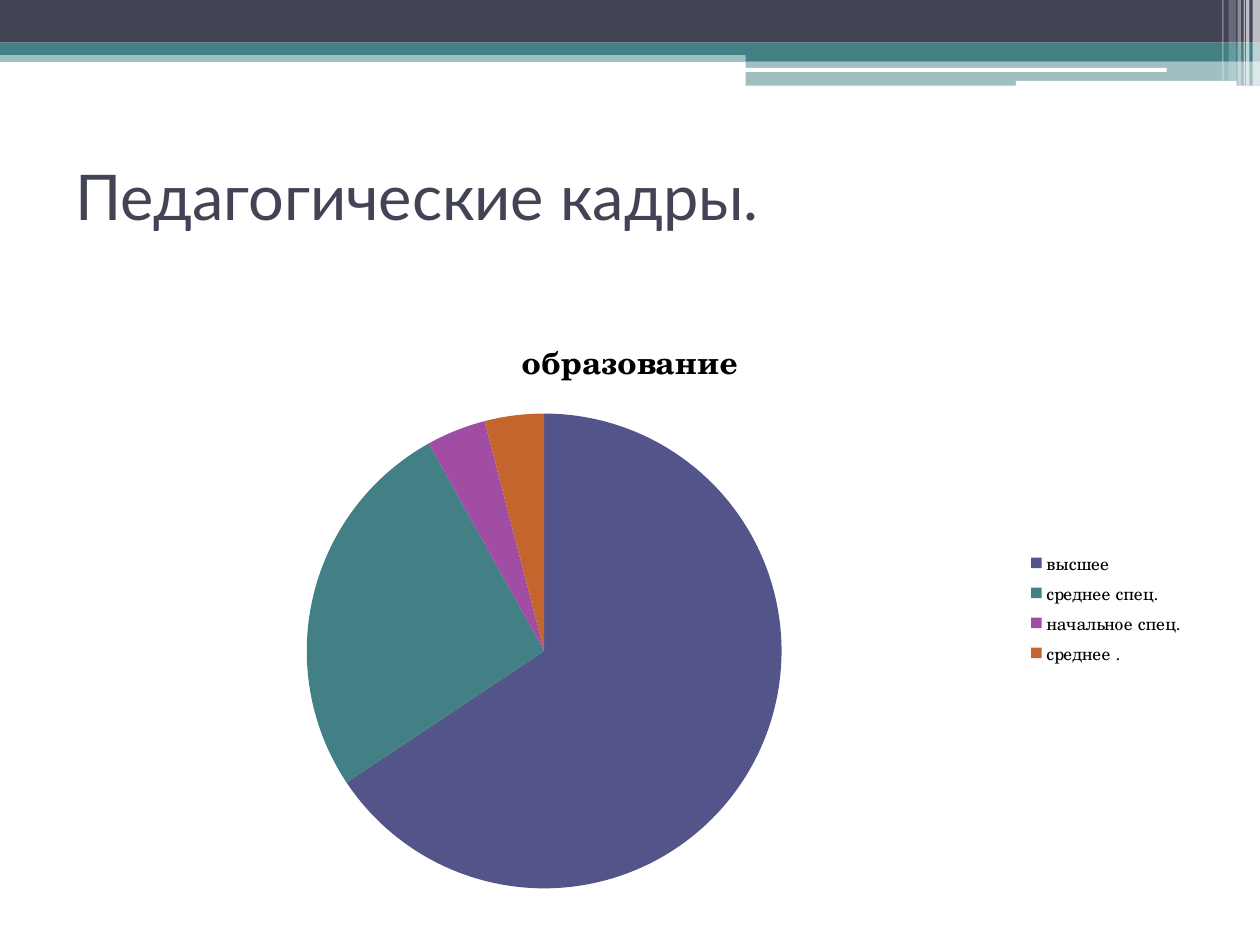
import pptx
import pptx.chart.data
import pptx.dml.color
import pptx.enum.chart
import pptx.enum.shapes
import pptx.enum.text
import pptx.oxml
import pptx.oxml.ns
import pptx.util
from pptx.util import Cm

COLOURS = {
    "slate": "424456",
    "teal": "438086",
    "white": "FFFFFF",
    "black": "000000",
    "indigo": "53548A",
    "purple": "A04DA3",
    "orange": "C4652D",
}


class SlideBuilder:
    """Holds the style and the current slide and adds each kind of element."""

    heading_font = "Lato"
    chart_font = "TeX Gyre Schola"

    def __init__(self, slide):
        self.slide = slide

    def colour(self, name):
        return pptx.dml.color.RGBColor.from_string(COLOURS[name])

    def paint(self, fill, name):
        fill.solid()
        fill.fore_color.rgb = self.colour(name)

    def style_font(self, font, name, size, colour, bold=False):
        font.name = name
        font.size = pptx.util.Pt(size)
        font.bold = bold
        font.color.rgb = self.colour(colour)

    def bar(self, left, top, width, height, colour, opacity=100, rounded=False):
        kinds = pptx.enum.shapes.MSO_SHAPE
        kind = kinds.ROUNDED_RECTANGLE if rounded else kinds.RECTANGLE
        shape = self.slide.shapes.add_shape(kind, Cm(left), Cm(top), Cm(width), Cm(height))
        shape.shadow.inherit = False
        shape.line.fill.background()
        self.paint(shape.fill, colour)
        if opacity < 100:
            colour_element = shape.fill._xPr.find(".//" + pptx.oxml.ns.qn("a:srgbClr"))
            alpha = pptx.oxml.parse_xml(
                f'<a:alpha {pptx.oxml.ns.nsdecls("a")} val="{opacity * 1000}"/>'
            )
            colour_element.append(alpha)

    def title(self, text, left, top, width, height):
        shape = self.slide.shapes.add_textbox(Cm(left), Cm(top), Cm(width), Cm(height))
        frame = shape.text_frame
        frame.word_wrap = True
        frame.margin_top = 0
        frame.vertical_anchor = pptx.enum.text.MSO_ANCHOR.TOP
        run = frame.paragraphs[0].add_run()
        run.text = text
        self.style_font(run.font, self.heading_font, 36, "slate")

    def pie(self, name, slices, left, top, width, height):
        data = pptx.chart.data.CategoryChartData()
        data.categories = [category for category, value, colour in slices]
        data.add_series(name, [value for category, value, colour in slices])
        chart = self.slide.shapes.add_chart(
            pptx.enum.chart.XL_CHART_TYPE.PIE, Cm(left), Cm(top), Cm(width), Cm(height), data
        ).chart
        self.style_font(chart.font, self.chart_font, 10, "black")
        chart.has_title = True
        run = chart.chart_title.text_frame.paragraphs[0].add_run()
        run.text = name
        self.style_font(run.font, self.chart_font, 18, "black", bold=True)
        chart.has_legend = True
        chart.legend.position = pptx.enum.chart.XL_LEGEND_POSITION.RIGHT
        chart.legend.include_in_layout = False
        plot = chart.plots[0]
        plot.vary_by_categories = True
        for index, (category, value, colour) in enumerate(slices):
            self.paint(plot.series[0].points[index].format.fill, colour)


def main():
    presentation = pptx.Presentation()
    presentation.slide_width = Cm(25.4)
    presentation.slide_height = Cm(19.05)
    builder = SlideBuilder(presentation.slides.add_slide(presentation.slide_layouts[6]))

    builder.bar(0, 1.02, 25.4, 0.23, "teal", 50)
    builder.bar(0, 0, 25.4, 0.86, "slate")
    builder.bar(0, 0.86, 25.4, 0.25, "teal")
    builder.bar(15.03, 1, 10.37, 0.23, "teal")
    builder.bar(15.03, 1.23, 10.37, 0.5, "teal", 50)
    builder.bar(15.02, 1.37, 8.5, 0.08, "white", rounded=True)
    builder.bar(20.48, 1.63, 4.45, 0.1, "white", rounded=True)

    stripes = [
        (25.25, 0.15, 1.73, 65),
        (25.12, 0.07, 1.73, 65),
        (25.07, 0.03, 1.73, 60),
        (24.95, 0.07, 1.73, 40),
        (24.77, 0.15, 1.63, 20),
        (24.64, 0.03, 1.63, 30),
    ]
    for left, width, height, opacity in stripes:
        builder.bar(left, 0, width, height, "white", opacity)

    builder.title("Педагогические кадры.", 1.27, 3.17, 22.86, 2.97)
    education = [
        ("высшее", 65, "indigo"),
        ("среднее спец.", 26, "teal"),
        ("начальное спец.", 4, "purple"),
        ("среднее .", 4, "orange"),
    ]
    builder.pie("образование", education, 1.27, 6.25, 22.86, 12.01)
    presentation.save("out.pptx")


if __name__ == "__main__":
    main()
